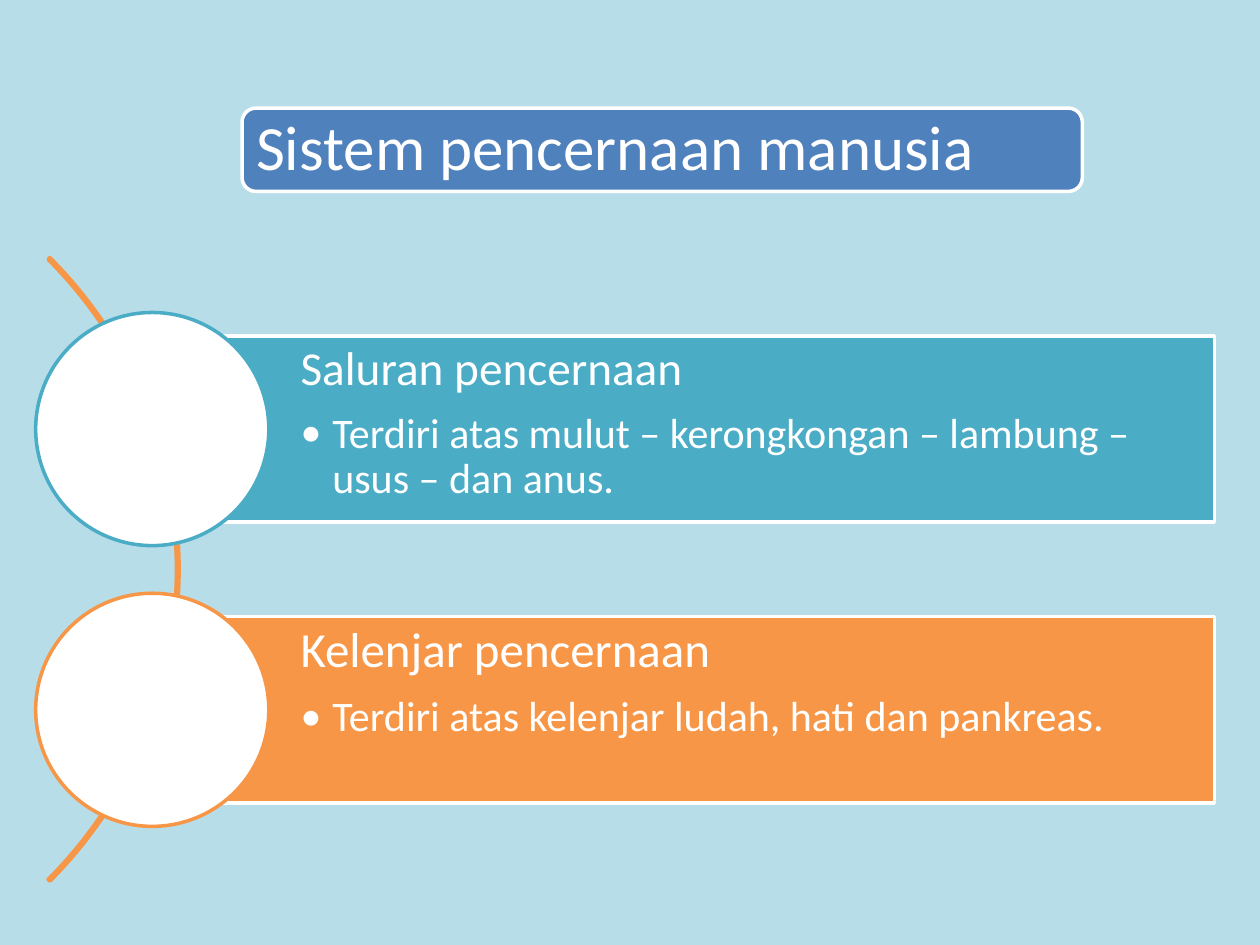
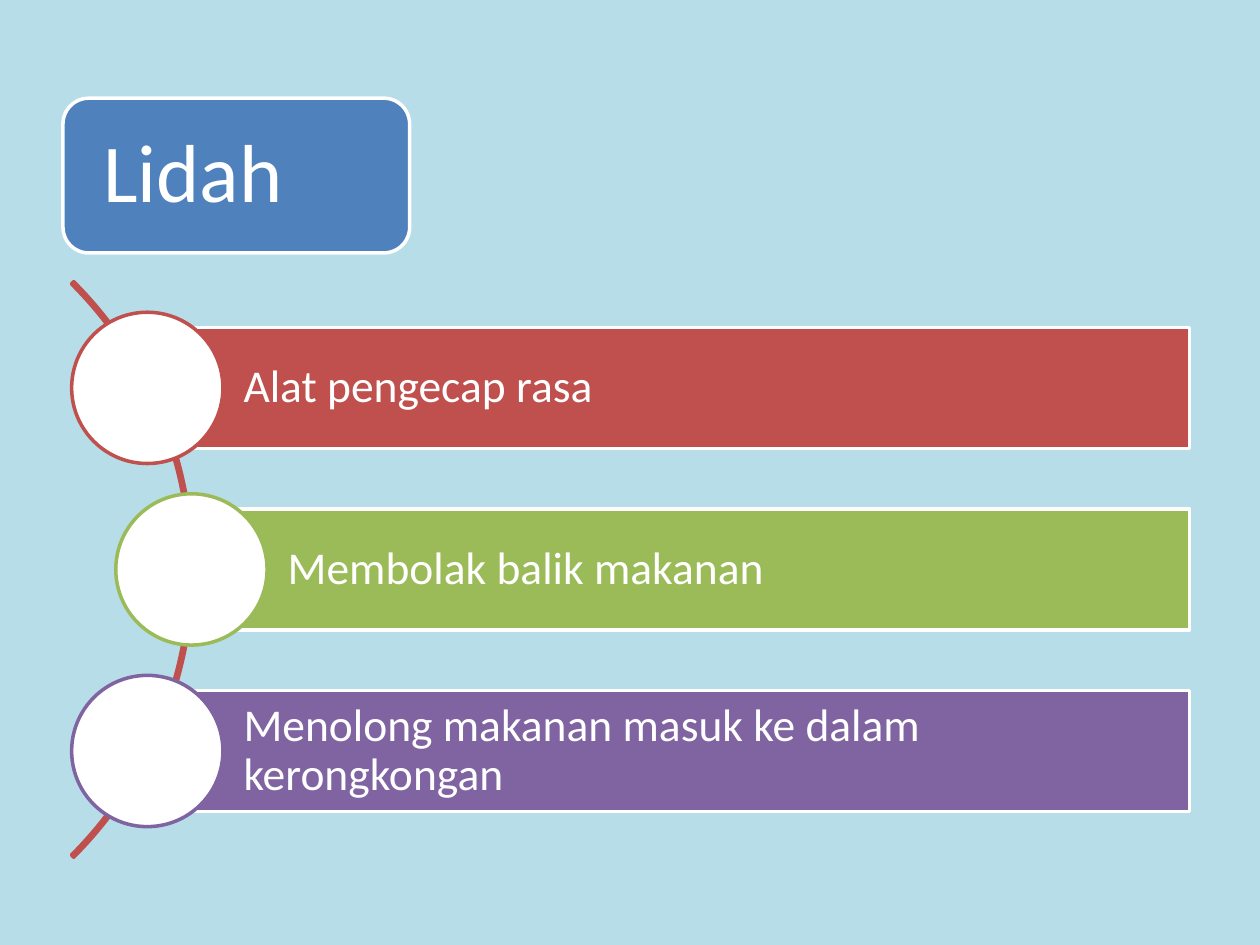
from lxml.etree import SubElement
from pptx import Presentation
from pptx.dml.color import RGBColor
from pptx.enum.shapes import MSO_SHAPE
from pptx.enum.text import MSO_ANCHOR, PP_ALIGN
from pptx.oxml.ns import qn
from pptx.util import Cm, Pt

FONT = "Calibri"
BACKGROUND, WHITE, BLUE = "B7DEE8", "FFFFFF", "4F81BD"
TEAL, ORANGE, RED, GREEN, PURPLE = "4BACC6", "F79646", "C0504D", "9BBB59", "8064A2"

# Lengths in centimetres
LIST_MIDDLE = 11.48
SIDE_INSET = 0.18
BULLET_INDENT = 0.64


def color(hex_value):
    return RGBColor.from_string(hex_value)


def write(paragraph, text, size, bullet=False, space_after=None):
    """Fill one paragraph with white, left-aligned text."""
    paragraph.alignment = PP_ALIGN.LEFT
    paragraph.line_spacing = 0.9
    if space_after is not None:
        paragraph.space_after = Pt(space_after)
    run = paragraph.add_run()
    run.text = text
    run.font.name = FONT
    run.font.size = Pt(size)
    run.font.color.rgb = color(WHITE)
    if bullet:
        paragraph.level = 1
        properties = paragraph._p.get_or_add_pPr()
        properties.set("marL", str(Cm(BULLET_INDENT)))
        properties.set("indent", str(-Cm(BULLET_INDENT)))
        SubElement(properties, qn("a:buFont")).set("typeface", FONT)
        SubElement(properties, qn("a:buChar")).set("char", "•")


class Deck:
    """Holds the shared style and the slide being built."""

    def __init__(self):
        self.presentation = Presentation()
        self.presentation.slide_width = Cm(25.4)
        self.presentation.slide_height = Cm(19.05)
        self.slide = None

    def new_slide(self):
        self.slide = self.presentation.slides.add_slide(self.presentation.slide_layouts[6])
        fill = self.slide.background.fill
        fill.solid()
        fill.fore_color.rgb = color(BACKGROUND)

    def shape(self, kind, left, top, width, height, fill=None, line=WHITE):
        shape = self.slide.shapes.add_shape(kind, Cm(left), Cm(top), Cm(width), Cm(height))
        shape.shadow.inherit = False
        if fill:
            shape.fill.solid()
            shape.fill.fore_color.rgb = color(fill)
        else:
            shape.fill.background()
        shape.line.color.rgb = color(line)
        shape.line.width = Pt(2)
        return shape

    def text_frame(self, shape, left_inset, inset, anchor=MSO_ANCHOR.MIDDLE):
        frame = shape.text_frame
        frame.word_wrap = True
        frame.vertical_anchor = anchor
        frame.margin_left = Cm(left_inset)
        frame.margin_top = frame.margin_right = frame.margin_bottom = Cm(inset)
        return frame

    def title(self, text, left, top, width, height, size, inset):
        box = self.shape(MSO_SHAPE.ROUNDED_RECTANGLE, left, top, width, height, BLUE)
        write(self.text_frame(box, inset, inset).paragraphs[0], text, size)

    def arc(self, left, diameter, line, thickness):
        arc = self.shape(MSO_SHAPE.BLOCK_ARC, left, LIST_MIDDLE - diameter / 2,
                         diameter, diameter, line=line)
        # Angles from 315 to 45 degrees, in hundred-thousandths of the file unit
        for index, value in enumerate((189, 27, thickness)):
            arc.adjustments[index] = value

    def bar(self, left, top, right, height, fill, heading, size, detail=None):
        """A coloured bar with a circle centred on its left side."""
        bar = self.shape(MSO_SHAPE.RECTANGLE, left, top, right - left, height, fill)
        anchor = MSO_ANCHOR.TOP if detail else MSO_ANCHOR.MIDDLE
        frame = self.text_frame(bar, 0.795 * height, SIDE_INSET, anchor)
        write(frame.paragraphs[0], heading, size, space_after=0.35 * size if detail else None)
        if detail:
            write(frame.add_paragraph(), detail, 24, bullet=True)

        diameter = 1.25 * height
        self.shape(MSO_SHAPE.OVAL, left - diameter / 2, top + (height - diameter) / 2,
                   diameter, diameter, WHITE, fill)

    def bar_list(self, bars, right, height, pitch):
        """Stack equally spaced bars around the middle of the arc."""
        first_top = LIST_MIDDLE - ((len(bars) - 1) * pitch + height) / 2
        for index, (left, *content) in enumerate(bars):
            self.bar(left, first_top + index * pitch, right, height, *content)


def main():
    deck = Deck()

    # Digestive system
    deck.new_slide()
    deck.arc(-14.17, 17.78, ORANGE, 0.003)
    deck.bar_list([
        (3.07, TEAL, "Saluran pencernaan", 27,
         "Terdiri atas mulut – kerongkongan – lambung – usus – dan anus."),
        (3.07, ORANGE, "Kelenjar pencernaan", 28,
         "Terdiri atas kelenjar ludah, hati dan pankreas."),
    ], right=24.48, height=3.76, pitch=5.66)
    deck.title("Sistem pencernaan manusia", 4.88, 2.18, 16.94, 1.68, size=36, inset=0.2)

    # Tongue
    deck.new_slide()
    deck.arc(-12.52, 16.41, RED, 0.004)
    deck.bar_list([
        (2.97, RED, "Alat pengecap rasa", 26),
        (3.86, GREEN, "Membolak balik makanan", 26),
        (2.97, PURPLE, "Menolong makanan masuk ke dalam kerongkongan", 26),
    ], right=23.98, height=2.44, pitch=3.66)
    deck.title("Lidah", 1.27, 1.98, 6.99, 3.12, size=47, inset=0.66)

    deck.presentation.save("out.pptx")


if __name__ == "__main__":
    main()
